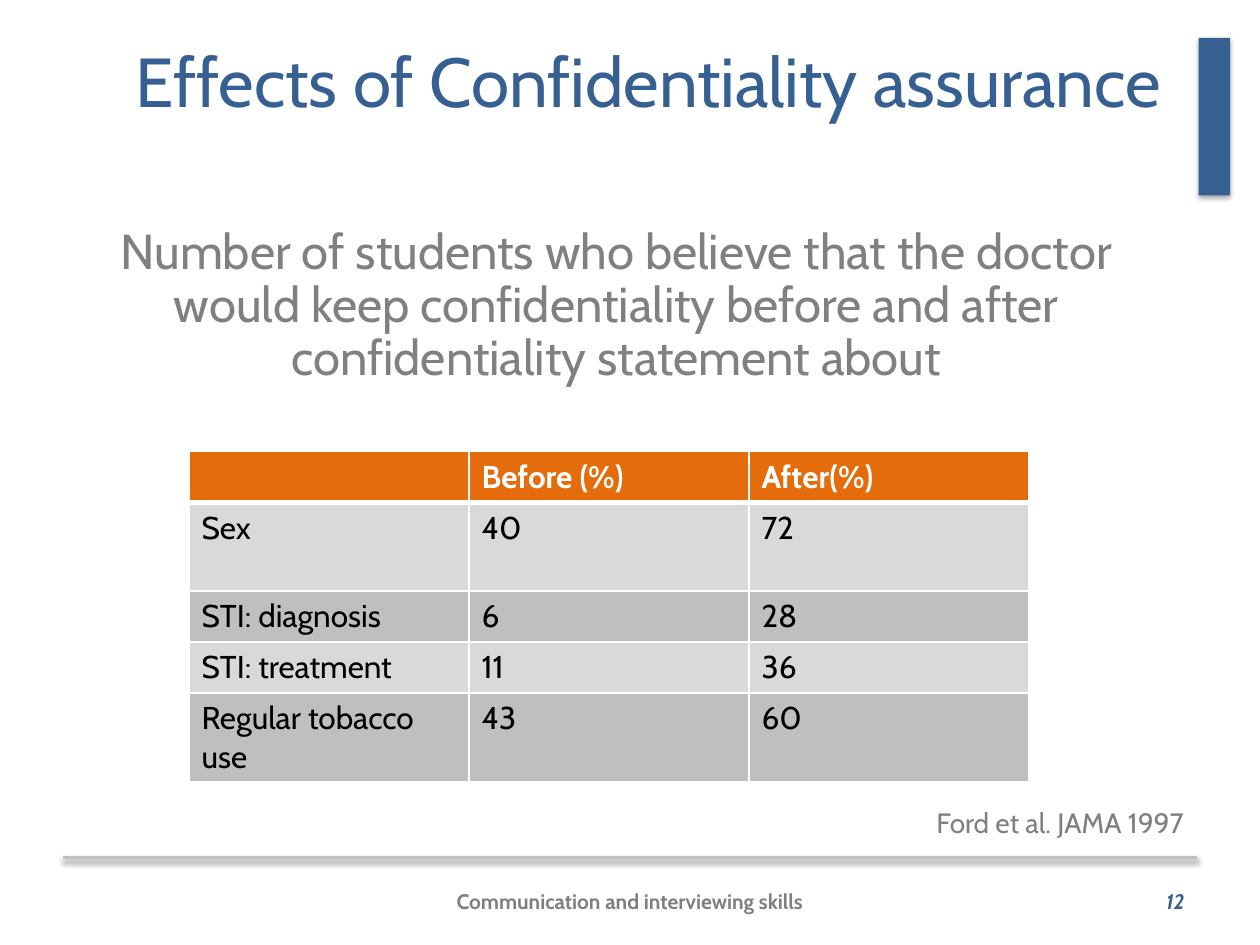
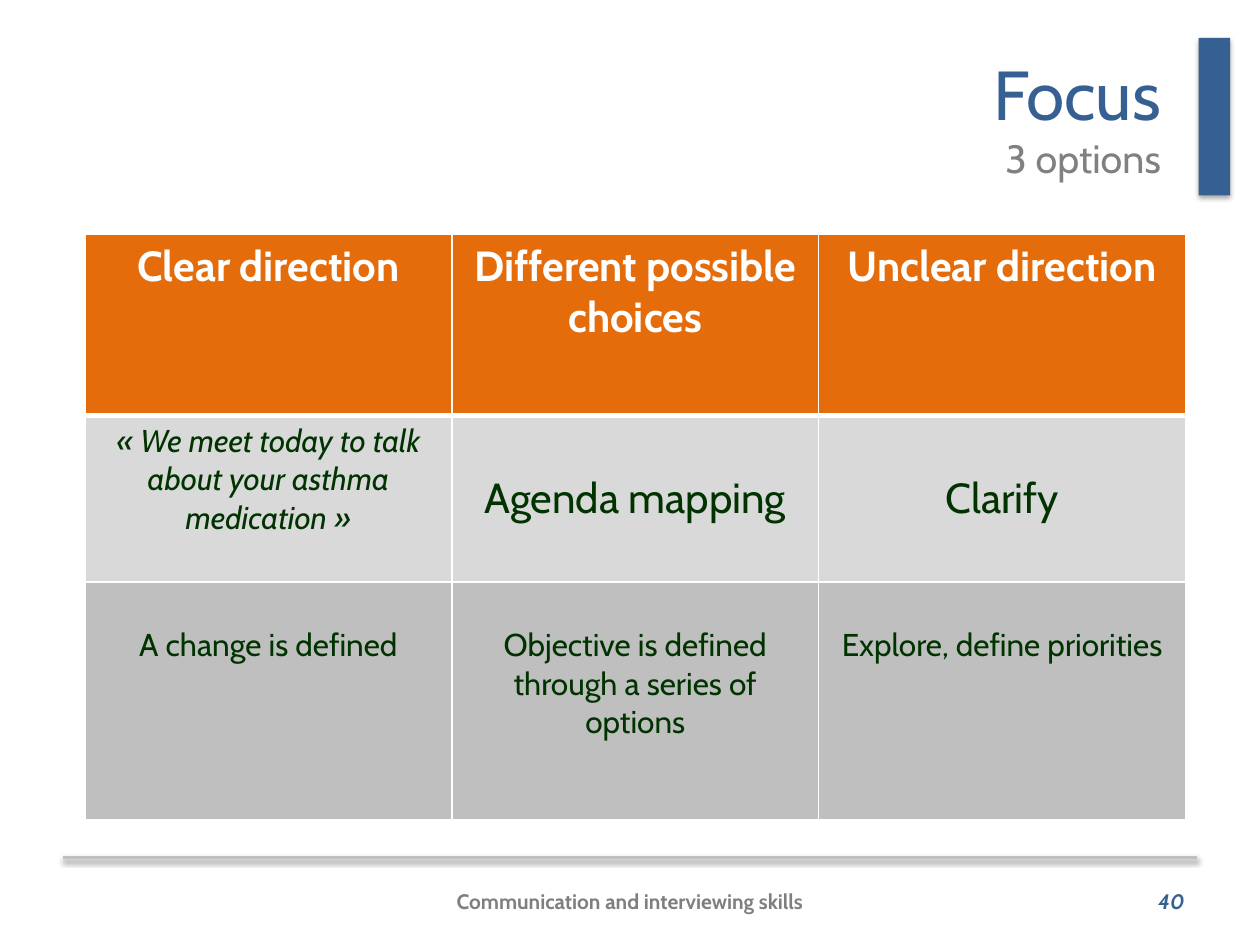
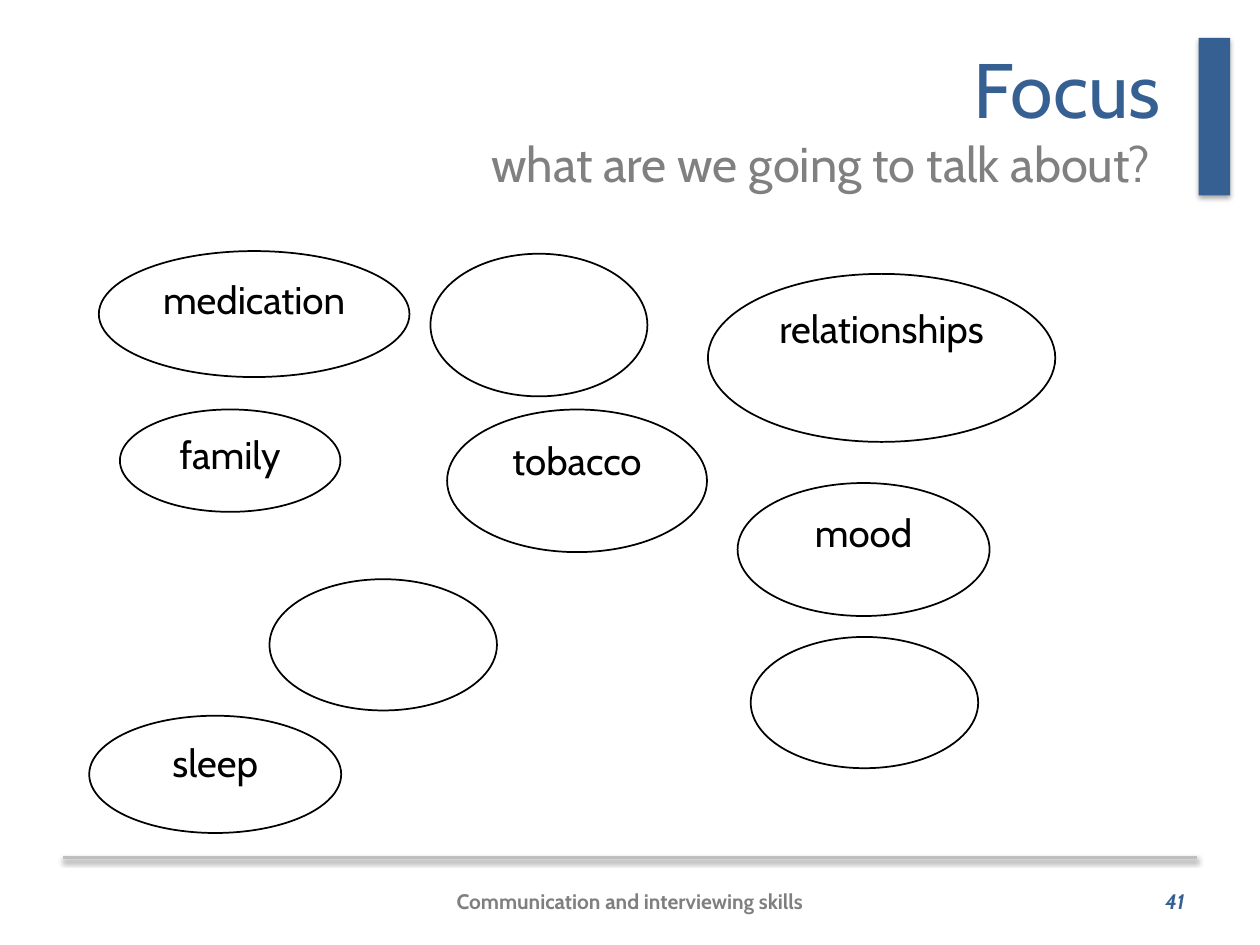
import pptx
import pptx.dml.color
import pptx.enum.shapes
import pptx.enum.text
import pptx.oxml
import pptx.oxml.ns
import pptx.util

Pt = pptx.util.Pt
ALIGN = pptx.enum.text.PP_ALIGN
ANCHOR = pptx.enum.text.MSO_ANCHOR
SHAPE = pptx.enum.shapes.MSO_SHAPE

FONT = "Cabin"
COLORS = {
    "blue": "376092", "orange": "E46C0A", "white": "FFFFFF", "black": "000000",
    "light": "D9D9D9", "mid": "BFBFBF", "gray": "808080", "footer": "7F7F7F",
    "green": "003300",
}

FOOTER = "Communication and interviewing skills"

CONFIDENTIALITY = {
    "number": "12",
    "title": [("Effects of Confidentiality assurance", 39.6, "blue")],
    "question": "Number of students who believe that the doctor would keep "
                "confidentiality before and after confidentiality statement about",
    "rows": [
        ("", "Before (%)", "After(%)"),
        ("Sex", "40", "72"),
        ("STI: diagnosis", "6", "28"),
        ("STI: treatment", "11", "36"),
        ("Regular tobacco use", "43", "60"),
    ],
    "heights": [29.2, 50.4, 29.2, 29.2, 50.4],
    "source": "Ford et al. JAMA 1997",
}

OPTIONS = {
    "number": "40",
    "title": [("Focus", 39.6, "blue"), ("3 options", 22.5, "gray")],
    "rows": [
        ("Clear direction", "Different possible choices", "Unclear direction"),
        ("«\u00a0We meet today to talk about your asthma medication\u00a0»", "Agenda mapping", "Clarify"),
        ("A change is defined", "Objective is defined through a series of options",
         "Explore, define priorities"),
    ],
    "heights": [103.5, 95, 136],
}

TOPICS = {
    "number": "41",
    "title": [("Focus", 44.1, "blue"), ("what are we going to talk about? ", 27.9, "gray")],
    # topic, left, top, width, height
    "bubbles": [
        ("family", 68.5, 234, 126, 58.5),
        ("medication", 56.5, 143.5, 177.5, 72),
        ("", 154, 331, 130, 75),
        ("tobacco", 255.5, 234, 148.5, 81.5),
        ("sleep", 51, 409, 144, 67),
        ("", 246, 145, 124, 81.5),
        ("mood", 421.5, 276, 144, 76),
        ("relationships", 404.5, 156.5, 198.5, 96),
        ("", 429, 364, 130, 75),
    ],
}


def rgb(name):
    return pptx.dml.color.RGBColor.from_string(COLORS[name])


def write(paragraph, text, size, color, align, bold=False, italic=False):
    paragraph.text = text
    paragraph.alignment = align
    for run in paragraph.runs:
        run.font.name = FONT
        run.font.size = Pt(size)
        run.font.color.rgb = rgb(color)
        run.font.bold = bold
        run.font.italic = italic


def add_text(slide, box, lines, align, anchor=ANCHOR.TOP, **style):
    """Add a wrapping text box; lines holds (text, size, color) per paragraph."""
    frame = slide.shapes.add_textbox(*map(Pt, box)).text_frame
    frame.word_wrap = True
    frame.vertical_anchor = anchor
    for index, (text, size, color) in enumerate(lines):
        paragraph = frame.add_paragraph() if index else frame.paragraphs[0]
        write(paragraph, text, size, color, align, **style)
    return frame


def drop_shadow(shape, distance, opacity):
    shape._element.spPr.append(pptx.oxml.parse_xml(
        f'<a:effectLst {pptx.oxml.ns.nsdecls("a")}>'
        f'<a:outerShdw blurRad="{Pt(3.1)}" dist="{Pt(distance)}" dir="5400000" rotWithShape="0">'
        f'<a:srgbClr val="{COLORS["black"]}"><a:alpha val="{opacity * 1000}"/></a:srgbClr>'
        '</a:outerShdw></a:effectLst>'))


def start_slide(deck, content):
    """Add a slide with its rule, side band, footer, number and title."""
    slide = deck.slides.add_slide(deck.slide_layouts[6])
    rule = slide.shapes.add_connector(
        pptx.enum.shapes.MSO_CONNECTOR.STRAIGHT, Pt(36), Pt(490), Pt(684), Pt(490))
    rule.line.color.rgb = rgb("mid")
    rule.line.width = Pt(2)
    drop_shadow(rule, 1.6, 38)

    band = slide.shapes.add_shape(SHAPE.RECTANGLE, Pt(685), Pt(21.6), Pt(18), Pt(90))
    band.fill.solid()
    band.fill.fore_color.rgb = rgb("blue")
    band.line.fill.background()
    drop_shadow(band, 1.8, 35)

    add_text(slide, (246, 500.5, 228, 28.8), [(FOOTER, 12, "footer")],
             ALIGN.CENTER, ANCHOR.MIDDLE, bold=True)
    add_text(slide, (516, 500.5, 168, 28.8), [(content["number"], 12, "blue")],
             ALIGN.RIGHT, ANCHOR.MIDDLE, bold=True, italic=True)
    title_anchor = ANCHOR.MIDDLE if len(content["title"]) > 1 else ANCHOR.TOP
    title = add_text(slide, (36, 21.6, 634.5, 90), content["title"], ALIGN.RIGHT, title_anchor)
    if title_anchor == ANCHOR.TOP:
        title.margin_top = 0
    return slide


def set_borders(cell, widths):
    for side, width in widths.items():
        cell._tc.get_or_add_tcPr().append(pptx.oxml.parse_xml(
            f'<a:{side} {pptx.oxml.ns.nsdecls("a")} w="{Pt(width)}"><a:solidFill>'
            f'<a:srgbClr val="{COLORS["white"]}"/></a:solidFill></a:{side}>'))


def add_grid(slide, content, left, top, width, style_cell):
    """Add a table with an orange header and alternating gray rows."""
    rows, heights = content["rows"], content["heights"]
    table = slide.shapes.add_table(
        len(rows), len(rows[0]), Pt(left), Pt(top), Pt(width), Pt(sum(heights))).table
    table.first_row = table.horz_banding = False
    for row, height in zip(table.rows, heights):
        row.height = Pt(height)
    for r, texts in enumerate(rows):
        for c, text in enumerate(texts):
            cell = table.cell(r, c)
            set_borders(cell, {"lnL": 1, "lnR": 1, "lnT": 3 if r == 1 else 1,
                               "lnB": 3 if r == 0 else 1})
            cell.fill.solid()
            cell.fill.fore_color.rgb = rgb("orange" if r == 0 else "light" if r % 2 else "mid")
            style_cell(cell, text, r, c)


def style_share(cell, text, r, c):
    write(cell.text_frame.paragraphs[0], text, 18, "black" if r else "white",
          ALIGN.LEFT, bold=r == 0)


def style_option(cell, text, r, c):
    is_quote = (r, c) == (1, 0)
    size = 18 if is_quote or r == 2 else 24
    write(cell.text_frame.paragraphs[0], text, size, "green" if r else "white",
          ALIGN.CENTER, bold=r == 0, italic=is_quote)
    if r == 1 and not is_quote:
        cell.vertical_anchor = ANCHOR.MIDDLE
    if r == 2:
        cell.margin_top = Pt(25.5)


def add_bubble(slide, topic, *box):
    bubble = slide.shapes.add_shape(SHAPE.OVAL, *map(Pt, box))
    bubble.shadow.inherit = False
    bubble.fill.solid()
    bubble.fill.fore_color.rgb = rgb("white")
    bubble.line.color.rgb = rgb("black")
    bubble.line.width = Pt(1)
    bubble.text_frame.vertical_anchor = ANCHOR.TOP
    if topic:
        write(bubble.text_frame.paragraphs[0], topic, 22, "black", ALIGN.CENTER)


def main():
    deck = pptx.Presentation()
    deck.slide_width, deck.slide_height = Pt(720), Pt(540)

    slide = start_slide(deck, CONFIDENTIALITY)
    question = add_text(slide, (25, 126.5, 654, 100),
                        [(CONFIDENTIALITY["question"], 28, "gray")], ALIGN.CENTER)
    question.paragraphs[0].line_spacing = 0.9
    add_text(slide, (388, 457, 295.5, 26.6), [(CONFIDENTIALITY["source"], 16, "gray")], ALIGN.RIGHT)
    add_grid(slide, CONFIDENTIALITY, 108, 258, 480, style_share)

    slide = start_slide(deck, OPTIONS)
    add_grid(slide, OPTIONS, 48.5, 134, 629, style_option)

    slide = start_slide(deck, TOPICS)
    for bubble in TOPICS["bubbles"]:
        add_bubble(slide, *bubble)

    deck.save("out.pptx")


if __name__ == "__main__":
    main()
